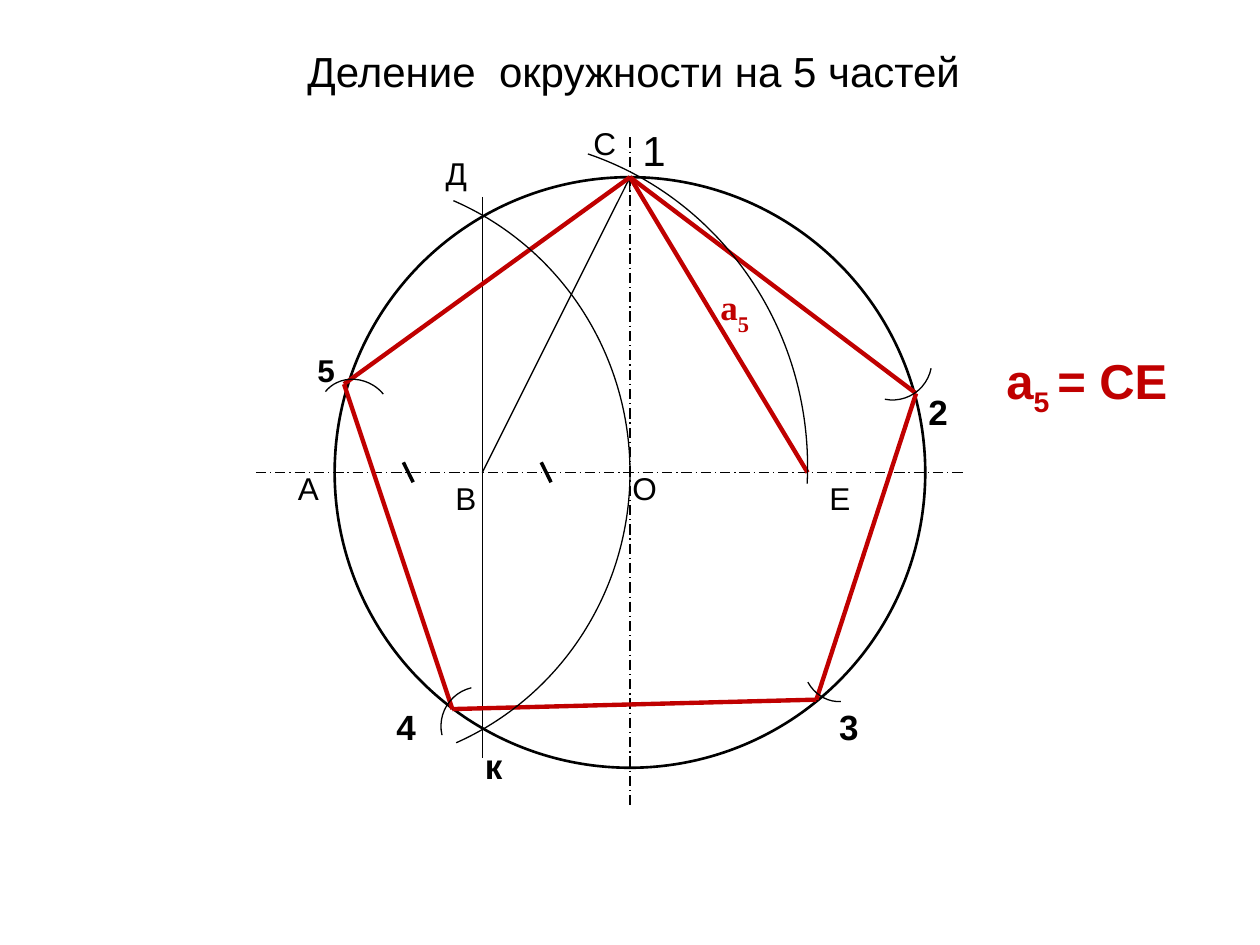
"""Build a slide that shows how to divide a circle into five parts."""
from dataclasses import dataclass

from lxml import etree
from pptx import Presentation
from pptx.dml.color import RGBColor
from pptx.enum import dml, shapes, text
from pptx.oxml.ns import qn
from pptx.util import Pt

COLORS = {"black": "000000", "red": "C00000"}
Point = tuple[float, float]


@dataclass
class Label:
    text: str
    left: float
    top: float
    width: float = 28
    size: float = 18
    bold: bool = False


@dataclass
class Arc:
    left: float
    top: float
    width: float
    height: float
    start: float = 162
    end: float = 0
    rotation: float = 0


@dataclass
class Line:
    start: Point
    end: Point
    width: float = 0.75
    color: str = "black"
    dashed: bool = False
    arrow: bool = False


CENTER_X, CENTER_Y, RADIUS = 360, 270, 168.75
TOP_POINT = (CENTER_X, CENTER_Y - RADIUS)
POINT_B = (CENTER_X - RADIUS / 2, CENTER_Y)
POINT_E = (461.5, CENTER_Y)
VERTICES = [TOP_POINT, (523.5, 224.8), (466.5, 399.8), (258.5, 405.2), (196.6, 219.5)]

CONSTRUCTION_LINES = [
    Line((CENTER_X, 78.5), (CENTER_X, 461.5), dashed=True),
    Line((146.2, CENTER_Y), (551.5, CENTER_Y), dashed=True),
    Line((POINT_B[0], 112.5), (POINT_B[0], 433.2)),
    Line(POINT_B, TOP_POINT, arrow=True),
    *[Line((x, 264.2), (x + 5.6, 275.6), 2) for x in (230.5, 309.3)],
]
RED_LINES = [
    Line(start, end, 2.5, "red")
    for start, end in [(TOP_POINT, POINT_E), *zip(VERTICES, VERTICES[1:] + VERTICES[:1])]
]
ARCS = [
    Arc(28.1, 101.2, 331.9, 337.5, 175.64, 40),
    Arc(95.6, 78.5, 365.9, 376.5, 172.69, 1.82),
    Arc(487.5, 183.6, 45, 45, rotation=101.2),
    Arc(459.4, 360.9, 36, 40.5, 173.78, rotation=151.3),
    Arc(252, 392.4, 45, 45, rotation=256.8),
    Arc(183.6, 215.3, 39, 43, 165.1, 13.15, 302.1),
]
LABELS = [
    Label("1", 360, 67.5, size=24),
    Label("2", 523.5, 219.5, size=20, bold=True),
    Label("3", 472.5, 399.5, 22.5, 20, True),
    Label("4", 219.5, 399.5, size=20, bold=True),
    Label("5", 174.3, 196.8, bold=True),
    Label("к", 270, 422, size=20, bold=True),
    Label("О", 354.3, 264.3),
    Label("А", 163.2, 264.3, 22.5),
    Label("В", 253.2, 270, 22.5),
    Label("С", 332, 67.5),
    Label("Д", 247.5, 84.3, 34),
    Label("Е", 466.8, 270),
]


def add_run(paragraph, content: str, *, size: float, font: str = "Arial",
            color: str = "black", bold: bool = False, baseline: int = 0) -> None:
    """Add one formatted run; baseline is a percentage shift."""
    run = paragraph.add_run()
    run.text = content
    run.font.size, run.font.name, run.font.bold = Pt(size), font, bold
    run.font.color.rgb = RGBColor.from_string(COLORS[color])
    if baseline:
        run.font._element.set("baseline", str(baseline * 1000))


def add_text_box(slide, left: float, top: float, width: float, height: float,
                 wrap: bool = True):
    """Add a text box and return its first paragraph."""
    box = slide.shapes.add_textbox(Pt(left), Pt(top), Pt(width), Pt(height))
    box.text_frame.word_wrap = wrap
    return box.text_frame.paragraphs[0]


def set_line(shape, width: float, color: str = "black") -> None:
    """Set the width and colour of an outline or connector."""
    shape.line.width = Pt(width)
    shape.line.color.rgb = RGBColor.from_string(COLORS[color])


def add_outline(slide, kind, left: float, top: float, width: float, height: float,
                line_width: float):
    """Add an unfilled preset shape."""
    shape = slide.shapes.add_shape(kind, Pt(left), Pt(top), Pt(width), Pt(height))
    shape.shadow.inherit = False
    shape.fill.background()
    set_line(shape, line_width)
    return shape


def add_arc(slide, arc: Arc) -> None:
    """Draw a compass arc."""
    shape = add_outline(slide, shapes.MSO_SHAPE.ARC, arc.left, arc.top,
                        arc.width, arc.height, 0.75)
    shape.adjustments[0], shape.adjustments[1] = arc.start, arc.end
    shape.rotation = arc.rotation


def add_line(slide, line: Line) -> None:
    """Draw a straight line."""
    connector = slide.shapes.add_connector(
        shapes.MSO_CONNECTOR.STRAIGHT, *[Pt(value) for value in line.start + line.end])
    set_line(connector, line.width, line.color)
    if line.dashed:
        connector.line.dash_style = dml.MSO_LINE.LONG_DASH_DOT
    properties = connector._element.spPr
    if line.arrow:
        etree.SubElement(properties.find(qn("a:ln")), qn("a:tailEnd"), type="arrow")
    etree.SubElement(properties, qn("a:effectLst"))


def add_title(slide, content: str) -> None:
    """Place and format the slide title."""
    title = slide.shapes.title
    title.left, title.top, title.width, title.height = Pt(168.5), Pt(22.5), Pt(388), Pt(36)
    title.text_frame.vertical_anchor = text.MSO_ANCHOR.TOP
    title.text_frame.auto_size = text.MSO_AUTO_SIZE.NONE
    paragraph = title.text_frame.paragraphs[0]
    paragraph.alignment = text.PP_ALIGN.LEFT
    add_run(paragraph, content, size=24)


def main() -> None:
    """Create and save the presentation."""
    presentation = Presentation()
    presentation.slide_width, presentation.slide_height = Pt(720), Pt(540)
    slide = presentation.slides.add_slide(presentation.slide_layouts[5])
    add_title(slide, "Деление  окружности на 5 частей")
    add_outline(slide, shapes.MSO_SHAPE.OVAL, CENTER_X - RADIUS, CENTER_Y - RADIUS,
                2 * RADIUS, 2 * RADIUS, 1.5)
    for line in CONSTRUCTION_LINES + RED_LINES:
        add_line(slide, line)
    for arc in ARCS:
        add_arc(slide, arc)
    for label in LABELS:
        paragraph = add_text_box(slide, label.left, label.top, label.width, label.size * 1.6)
        add_run(paragraph, label.text, size=label.size, bold=label.bold)

    side = add_text_box(slide, 399.6, 157.7, 37.5, 34, wrap=False)
    side_format = {"font": "Times New Roman", "color": "red", "bold": True}
    add_run(side, " а", size=20, **side_format)
    add_run(side, "5", size=22, baseline=-30, **side_format)

    formula = add_text_box(slide, 568, 197, 129.6, 135)
    for content, baseline in (("а", 0), ("5 ", -25), ("= СЕ", 0)):
        add_run(formula, content, size=28, color="red", bold=True, baseline=baseline)
    presentation.save("out.pptx")


if __name__ == "__main__":
    main()
